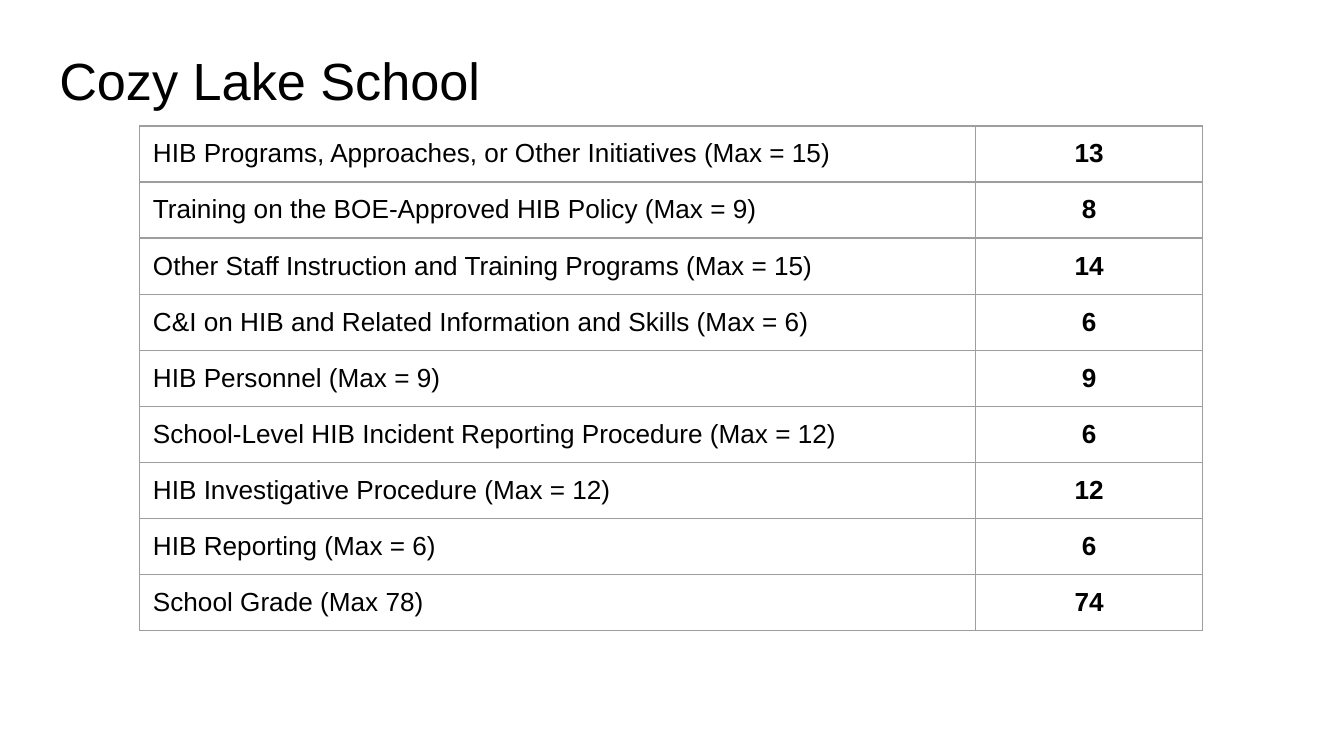
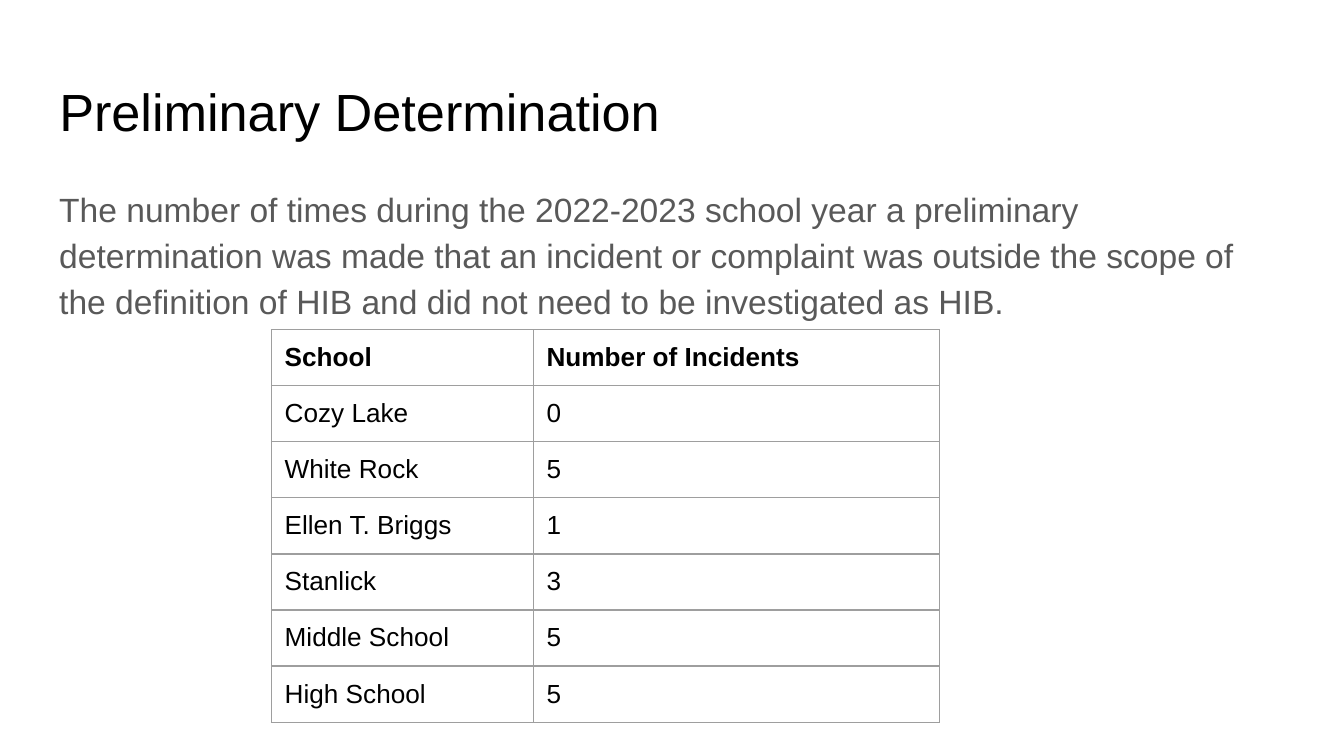
"""Build two slides on school HIB grades and preliminary determinations."""
from dataclasses import dataclass

from lxml import etree
from pptx import Presentation
from pptx import util as u
from pptx.dml.color import RGBColor
from pptx.enum import text
from pptx.oxml.ns import qn
from pptx.slide import Slide
from pptx.table import _Cell
from pptx.text.text import TextFrame

FONT = "Arial"
BLACK, GREY, RULE, WHITE = "000000", "595959", "9E9E9E", "FFFFFF"
MARGIN, CONTENT_WIDTH = u.Cm(0.87), u.Cm(23.67)
INSET, ROW_HEIGHT = u.Cm(0.25), u.Cm(1.06)
LEFT, CENTER = text.PP_ALIGN.LEFT, text.PP_ALIGN.CENTER


@dataclass(frozen=True)
class ScoreTable:
    """Position, content and emphasis of one two-column table."""
    left: u.Length
    top: u.Length
    widths: tuple[u.Length, u.Length]
    rows: tuple[tuple[str, str], ...]
    bold_header: bool = False
    bold_scores: bool = False
    score_align: text.PP_ALIGN = LEFT


GRADES = ScoreTable(
    u.Cm(2.64), u.Cm(2.38), (u.Cm(15.8), u.Cm(4.29)),
    (
        ("HIB Programs, Approaches, or Other Initiatives (Max = 15)", "13"),
        ("Training on the BOE-Approved HIB Policy (Max = 9)", "8"),
        ("Other Staff Instruction and Training Programs (Max = 15)", "14"),
        ("C&I on HIB and Related Information and Skills (Max = 6)", "6"),
        ("HIB Personnel (Max = 9)", "9"),
        ("School-Level HIB Incident Reporting Procedure (Max = 12)", "6"),
        ("HIB Investigative Procedure (Max = 12)", "12"),
        ("HIB Reporting (Max = 6)", "6"),
        ("School Grade (Max 78)", "74"),
    ),
    bold_scores=True, score_align=CENTER,
)
INCIDENTS = ScoreTable(
    u.Cm(5.13), u.Cm(6.23), (u.Cm(4.95), u.Cm(7.67)),
    (
        ("School", "Number of Incidents"),
        ("Cozy Lake", "0"),
        ("White Rock", "5"),
        ("Ellen T. Briggs", "1"),
        ("Stanlick", "3"),
        ("Middle School", "5"),
        ("High School", "5"),
    ),
    bold_header=True,
)
EXPLANATION = (
    "The number of times during the 2022-2023 school year a preliminary "
    "determination was made that an incident or complaint was outside the scope "
    "of the definition of HIB and did not need to be investigated as HIB."
)


def rgb(value: str) -> RGBColor:
    """Turn a hex string into a colour."""
    return RGBColor.from_string(value)


def write(frame: TextFrame, words: str, *, size: float, color: str = BLACK,
          bold: bool = False, align: text.PP_ALIGN = LEFT,
          spacing: float = 1.0) -> None:
    """Put one formatted paragraph into a text frame."""
    paragraph = frame.paragraphs[0]
    paragraph.alignment, paragraph.line_spacing = align, spacing
    run = paragraph.add_run()
    run.text = words
    run.font.name, run.font.size, run.font.bold = FONT, u.Pt(size), bold
    run.font.color.rgb = rgb(color)


def set_up_frame(frame: TextFrame) -> None:
    """Give a frame the shared insets, wrapping and top anchor."""
    frame.margin_left = frame.margin_right = INSET
    frame.margin_top = frame.margin_bottom = INSET
    frame.word_wrap = True
    frame.auto_size = text.MSO_AUTO_SIZE.NONE
    frame.vertical_anchor = text.MSO_ANCHOR.TOP


def add_titled_slide(deck: Presentation, heading: str, top: u.Length,
                     height: u.Length) -> Slide:
    """Add a white slide with a formatted title."""
    slide = deck.slides.add_slide(deck.slide_layouts[5])
    slide.background.fill.solid()
    slide.background.fill.fore_color.rgb = rgb(WHITE)
    title = slide.shapes.title
    title.left, title.top = MARGIN, top
    title.width, title.height = CONTENT_WIDTH, height
    set_up_frame(title.text_frame)
    write(title.text_frame, heading, size=28)
    return slide


def style_cell(cell: _Cell) -> None:
    """Give a cell its insets, thin borders and an empty fill."""
    cell.margin_left = cell.margin_right = INSET
    cell.margin_top = cell.margin_bottom = INSET
    properties = cell._tc.get_or_add_tcPr()
    for side in ("lnL", "lnR", "lnT", "lnB"):
        border = etree.SubElement(properties, qn(f"a:{side}"), w=str(u.Pt(0.75)))
        fill = etree.SubElement(border, qn("a:solidFill"))
        etree.SubElement(fill, qn("a:srgbClr"), val=RULE)
    cell.fill.background()


def add_score_table(slide: Slide, scores: ScoreTable) -> None:
    """Draw a two-column table with equal rows."""
    count = len(scores.rows)
    table = slide.shapes.add_table(
        count, 2, scores.left, scores.top, sum(scores.widths), ROW_HEIGHT * count
    ).table
    table.first_row = table.horz_banding = False
    for column, width in zip(table.columns, scores.widths):
        column.width = width
    for row, entries in enumerate(scores.rows):
        for column, entry in enumerate(entries):
            is_score = column == 1
            cell = table.cell(row, column)
            style_cell(cell)
            write(cell.text_frame, entry, size=14,
                  bold=(scores.bold_header and row == 0)
                  or (scores.bold_scores and is_score),
                  align=scores.score_align if is_score else LEFT)


def main() -> None:
    """Build and save the presentation."""
    deck = Presentation()
    deck.slide_width, deck.slide_height = u.Cm(25.4), u.Cm(14.29)

    grades = add_titled_slide(deck, "Cozy Lake School", u.Cm(0.66), u.Cm(1.45))
    add_score_table(grades, GRADES)

    determination = add_titled_slide(
        deck, "Preliminary Determination", u.Cm(1.24), u.Cm(1.6))
    explanation = determination.shapes.add_textbox(
        MARGIN, u.Cm(3.2), CONTENT_WIDTH, u.Cm(9.5)).text_frame
    set_up_frame(explanation)
    write(explanation, EXPLANATION, size=18, color=GREY, spacing=1.15)
    add_score_table(determination, INCIDENTS)

    deck.save("out.pptx")


if __name__ == "__main__":
    main()
